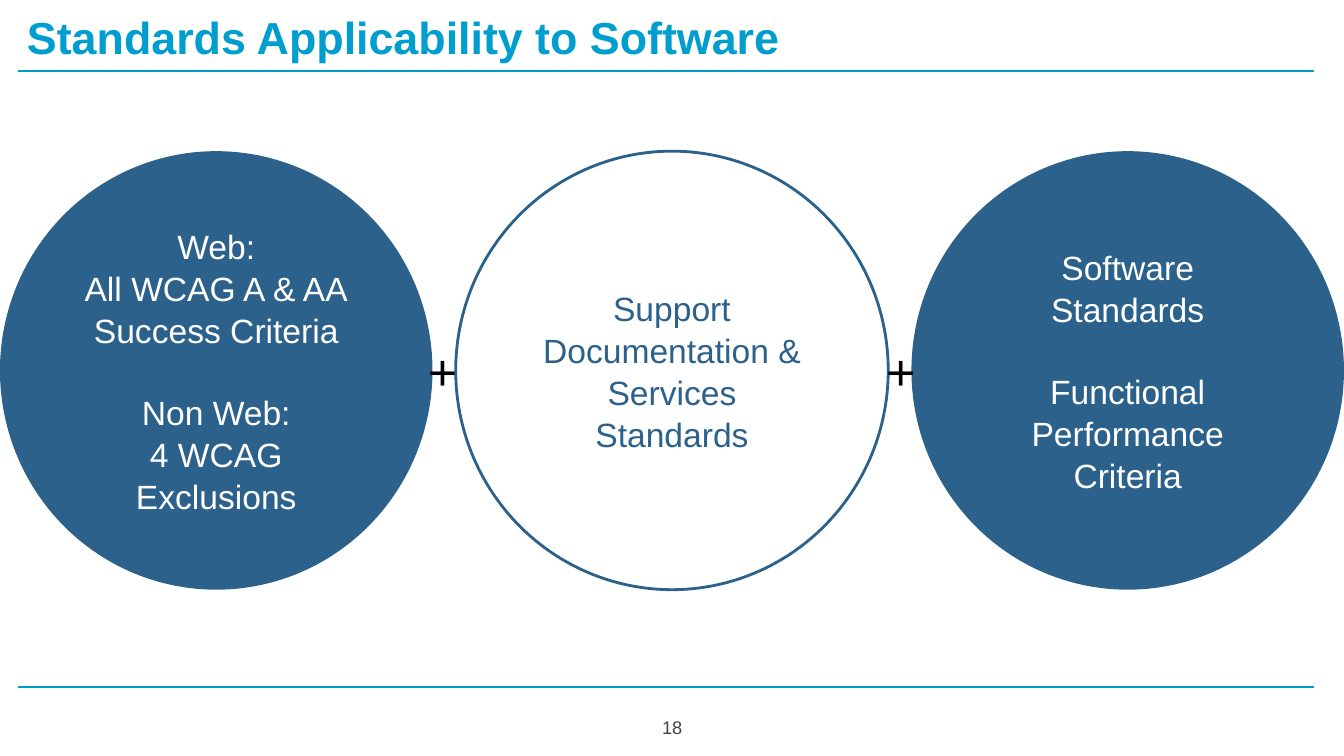
from lxml import etree
from pptx import Presentation
from pptx.dml.color import RGBColor
from pptx.enum.shapes import MSO_CONNECTOR, MSO_SHAPE
from pptx.enum.text import MSO_ANCHOR, MSO_AUTO_SIZE, PP_ALIGN
from pptx.oxml.ns import qn
from pptx.util import Cm, Pt

STRAIGHT, ELLIPSE = MSO_CONNECTOR.STRAIGHT, MSO_SHAPE.OVAL
TOP, MIDDLE = MSO_ANCHOR.TOP, MSO_ANCHOR.MIDDLE
LEFT, CENTER = PP_ALIGN.LEFT, PP_ALIGN.CENTER
NO_AUTOFIT = MSO_AUTO_SIZE.NONE

COLORS = {
    "accent": "009ECF",
    "circle": "2B618B",
    "white": "FFFFFF",
    "number": "434343",
    "black": "000000",
}
PAGE_WIDTH, PAGE_HEIGHT = 33.87, 19.05
CIRCLE_WIDTH, CIRCLE_HEIGHT, CIRCLE_TOP = 10.9, 11.05, 3.81
CIRCLE_STEP = (PAGE_WIDTH - CIRCLE_WIDTH) / 2
LINE_SPACING = 1.04
GROUP_GAP = 28.8

# Each circle: fill, text colour, groups of paragraphs
CIRCLES = [
    ("circle", "white", [
        ["Web:", "All WCAG A & AA", "Success Criteria"],
        ["Non Web:", "4 WCAG Exclusions"],
    ]),
    ("white", "circle", [["Support Documentation & Services Standards"]]),
    ("circle", "white", [
        ["Software Standards"],
        ["Functional Performance Criteria"],
    ]),
]


def rgb(name):
    return RGBColor.from_string(COLORS[name])


class SlideBuilder:
    def __init__(self, deck, font="Arial"):
        self.page = deck.slides.add_slide(deck.slide_layouts[5])
        self.font = font

    def style(self, para, size, color, align=CENTER, bold=False):
        para.alignment = align
        para.font.name = self.font
        para.font.size = Pt(size)
        para.font.bold = bold
        para.font.color.rgb = rgb(color)

    def frame(self, box, anchor, side=0.25, edge=0.13):
        frame = box.text_frame
        frame.word_wrap = True
        frame.auto_size = NO_AUTOFIT
        frame.vertical_anchor = anchor
        frame.margin_left = frame.margin_right = Cm(side)
        frame.margin_top = frame.margin_bottom = Cm(edge)
        return frame

    def title(self, text, left, top, width, height):
        box = self.page.shapes.title
        box.left, box.top, box.width, box.height = map(Cm, (left, top, width, height))
        frame = self.frame(box, TOP, edge=0.25)
        frame.text = text
        self.style(frame.paragraphs[0], 32, "accent", LEFT, bold=True)

    def rule(self, left, right, y):
        line = self.page.shapes.add_connector(STRAIGHT, Cm(left), Cm(y), Cm(right), Cm(y))
        line.line.color.rgb = rgb("accent")
        line.line.width = Pt(1.5)
        etree.SubElement(line._element.spPr, qn("a:effectLst"))

    def label(self, text, left, top, width, height, size, color, anchor=TOP):
        box = self.page.shapes.add_textbox(Cm(left), Cm(top), Cm(width), Cm(height))
        frame = self.frame(box, anchor)
        frame.text = text
        self.style(frame.paragraphs[0], size, color)

    def circle(self, left, fill, text_color, groups):
        """Draw an ellipse whose paragraph groups are set apart by a line of space."""
        shape = self.page.shapes.add_shape(
            ELLIPSE, Cm(left), Cm(CIRCLE_TOP), Cm(CIRCLE_WIDTH), Cm(CIRCLE_HEIGHT))
        shape.shadow.inherit = False
        shape.fill.solid()
        shape.fill.fore_color.rgb = rgb(fill)
        if fill == "white":
            shape.line.color.rgb = rgb("circle")
            shape.line.width = Pt(2)
        else:
            shape.line.fill.background()
        frame = self.frame(shape, MIDDLE)
        para = None
        for group in groups:
            for position, text in enumerate(group):
                starts_new_group = para is not None and position == 0
                para = frame.paragraphs[0] if para is None else frame.add_paragraph()
                para.text = text
                para.line_spacing = LINE_SPACING
                if starts_new_group:
                    para.space_before = Pt(GROUP_GAP)
                self.style(para, 24, text_color)


def main():
    deck = Presentation()
    deck.slide_width, deck.slide_height = Cm(PAGE_WIDTH), Cm(PAGE_HEIGHT)
    slide = SlideBuilder(deck)
    for y in (1.78, 17.32):
        slide.rule(0.46, 33.12, y)
    slide.title("Standards Applicability to Software", 0.43, 0, 24.84, 1.78)
    slide.label("18", 16.18, 17.6, 1.52, 1.45, 13, "number", MIDDLE)
    for index, (fill, text_color, groups) in enumerate(CIRCLES):
        slide.circle(index * CIRCLE_STEP, fill, text_color, groups)
    for index in range(len(CIRCLES) - 1):
        slide.label("+", 9.96 + index * 11.55, 8.43, 2.39, 1.8, 36, "black")
    deck.save("out.pptx")


if __name__ == "__main__":
    main()
